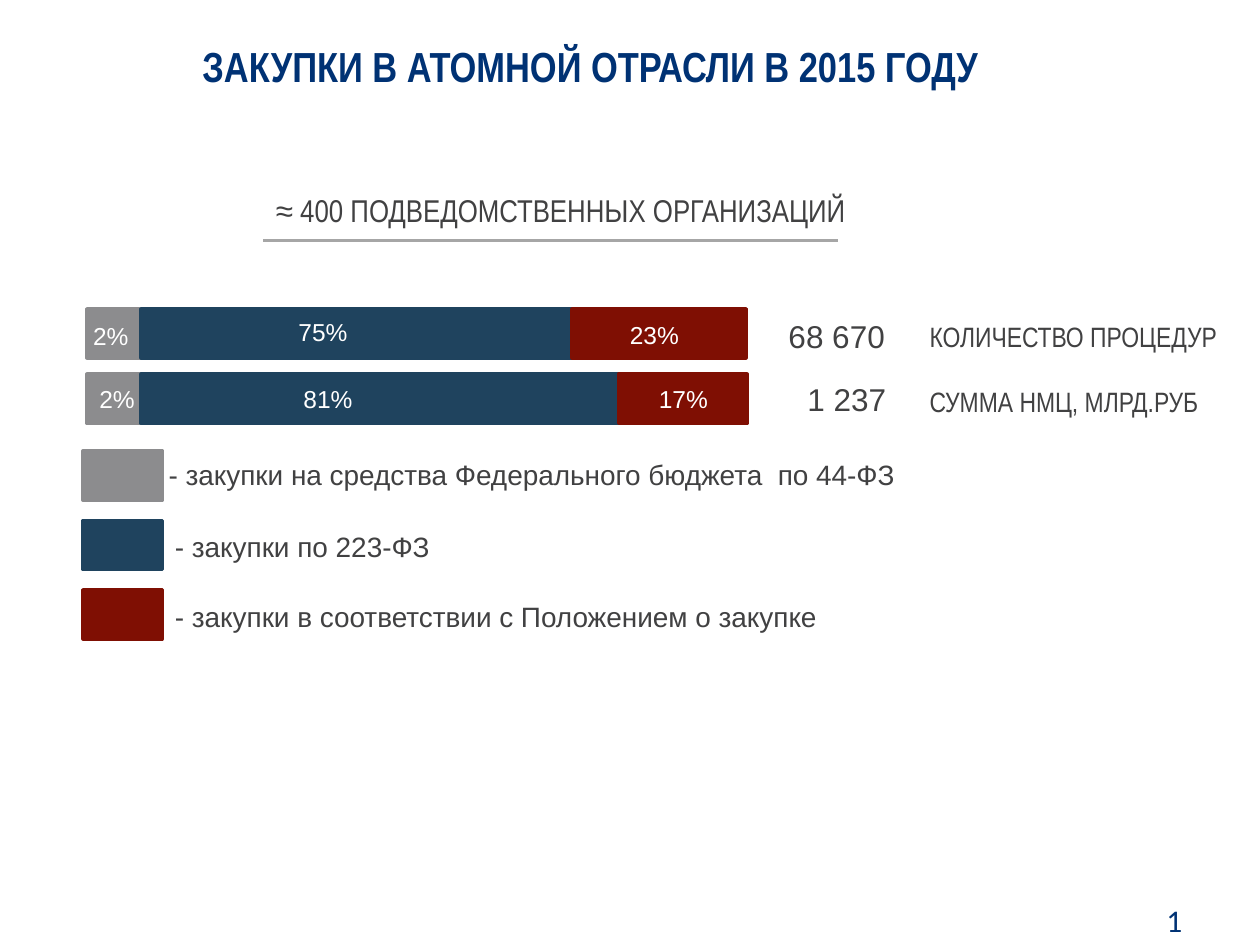
from pptx import Presentation
from pptx.dml.color import RGBColor
from pptx.enum.shapes import MSO_CONNECTOR, MSO_SHAPE
from pptx.enum.text import MSO_ANCHOR, MSO_AUTO_SIZE, PP_ALIGN
from pptx.oxml.ns import qn
from pptx.util import Inches, Pt
from lxml.etree import SubElement

WIDE, HIGH = Inches(10), Inches(7.5)
COLS, ROWS = 100, 75
GREY, BLUE, RED = "8C8C8E", "1F435E", "7F0F03"
INK, NAVY, WHITE, RULE = "414142", "003274", "FFFFFF", "A6A6A6"
SANS, SLIM = "Arial", "Arial Narrow"
TALL = 3.9


def tint(code):
    """Turn a hex string into a colour."""
    return RGBColor.from_string(code)


def area(col, row, cols, rows):
    """Turn grid cells into left, top, width and height."""
    across, down = WIDE / COLS, HIGH / ROWS
    return (round(col * across), round(row * down),
            round(cols * across), round(rows * down))


def style(part, size, face, code, bold=False):
    """Format every run in a text frame."""
    for para in part.paragraphs:
        for run in para.runs:
            run.font.size = Pt(size)
            run.font.name = face
            run.font.bold = bold
            run.font.color.rgb = tint(code)


def head(slide, text):
    """Fill and place the title."""
    title = slide.shapes.title
    title.left, title.top, title.width, title.height = area(5.1, 0, 83.5, 10.5)
    frame = title.text_frame
    frame.text = text
    frame.auto_size = MSO_AUTO_SIZE.NONE
    frame.vertical_anchor = MSO_ANCHOR.MIDDLE
    frame.margin_left = frame.margin_right = 0
    frame.margin_top = frame.margin_bottom = 0
    frame.paragraphs[0].alignment = PP_ALIGN.CENTER
    style(frame, 24, SLIM, NAVY, True)


def label(slide, text, col, row, cols, size, face=SANS, code=INK, wrap=True):
    """Add a line of text."""
    box = slide.shapes.add_textbox(*area(col, row, cols, size * 0.14 + 1.45))
    frame = box.text_frame
    frame.text = text
    frame.word_wrap = wrap
    frame.auto_size = MSO_AUTO_SIZE.SHAPE_TO_FIT_TEXT
    style(frame, size, face, code)


def block(slide, col, row, cols, code):
    """Add a solid block."""
    shape = slide.shapes.add_shape(
        MSO_SHAPE.RECTANGLE, *area(col, row, cols, TALL))
    shape.shadow.inherit = False
    shape.fill.solid()
    shape.fill.fore_color.rgb = tint(code)
    shape.line.color.rgb = tint(code)
    shape.line.width = Pt(2)


def stack(slide, row, widths, marks):
    """Add a stacked bar and its share labels."""
    col = 6.9
    for cols, code in zip(widths, (GREY, BLUE, RED)):
        block(slide, col, row, cols, code)
        col += cols
    for text, left, top, cols in marks:
        label(slide, text, left, top, cols, 14, SANS, WHITE)


def rule(slide, col, row, cols):
    """Add a level line."""
    left, top, width, _ = area(col, row, cols, 0)
    line = slide.shapes.add_connector(
        MSO_CONNECTOR.STRAIGHT, left, top, left + width, top)
    line.line.color.rgb = tint(RULE)
    line.line.width = Pt(1.75)
    SubElement(line._element.spPr, qn("a:effectLst"))


def key(slide):
    """Add the colour key."""
    items = (
        (GREY, "- закупки на средства Федерального бюджета  по 44-ФЗ", 12.4, 35.8),
        (BLUE, "- закупки по 223-ФЗ", 12.9, 41.5),
        (RED, "- закупки в соответствии с Положением о закупке", 12.9, 47.1),
    )
    for spot, (code, text, col, row) in enumerate(items):
        block(slide, 6.6, 35.8 + 5.5 * spot, 6.3, code)
        label(slide, text, col, row, 75, 16)


def main():
    """Build the slide."""
    deck = Presentation()
    deck.slide_width, deck.slide_height = WIDE, HIGH
    slide = deck.slides.add_slide(deck.slide_layouts[5])
    head(slide, "ЗАКУПКИ В АТОМНОЙ ОТРАСЛИ В 2015 ГОДУ")
    label(slide, "≈ 400 ПОДВЕДОМСТВЕННЫХ ОРГАНИЗАЦИЙ", 20.9, 14.7, 48.9, 18, SLIM)
    rule(slide, 20.9, 19.1, 45.6)
    stack(slide, 24.5, (4.3, 34.2, 13.8),
          (("2%", 6.4, 25, 6.7), ("75%", 22.7, 24.7, 7.9), ("23%", 49, 24.9, 7.9)))
    stack(slide, 29.7, (4.3, 37.9, 10.2),
          (("2%", 6.9, 30, 5), ("81%", 23.1, 30, 10.2), ("17%", 51.3, 30, 6.8)))
    label(slide, "68 670", 61.6, 24.7, 14.3, 18)
    label(slide, "1 237", 63.1, 29.7, 12.1, 18)
    label(slide, "КОЛИЧЕСТВО ПРОЦЕДУР", 72.8, 24.9, 26, 16, SLIM)
    label(slide, "СУММА НМЦ, МЛРД.РУБ", 72.8, 30, 25.2, 16, SLIM)
    key(slide)
    label(slide, "1", 91.6, 71, 3.3, 18, "Calibri", NAVY, False)
    deck.save("out.pptx")


if __name__ == "__main__":
    main()
